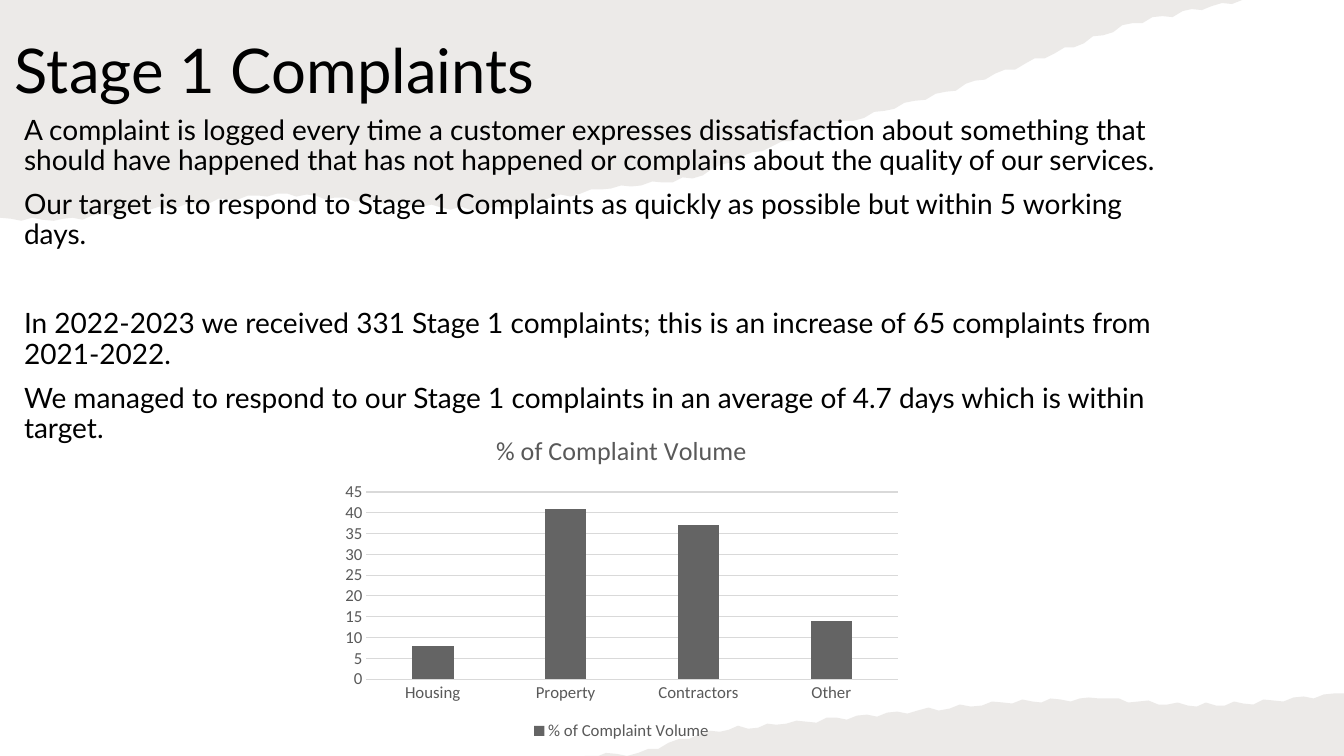
import math
from lxml import etree
from pptx import Presentation
from pptx import util as u
from pptx.chart.data import CategoryChartData
from pptx.dml.color import RGBColor
from pptx.enum import chart as charts, text
from pptx.oxml import ns

PX = 9144
SLIDE_WIDTH, SLIDE_HEIGHT = 1333, 750

BLACK = RGBColor(0x00, 0x00, 0x00)
WHITE = RGBColor(0xFF, 0xFF, 0xFF)
PAPER = RGBColor(0x82, 0x76, 0x6A)
BAR = RGBColor(0x64, 0x64, 0x64)
GRID = RGBColor(0xD9, 0xD9, 0xD9)
LABEL = RGBColor(0x59, 0x59, 0x59)

TEXT_FONT = "Lato"
CHART_FONT = "Calibri"
TITLE_SIZE, BODY_SIZE = 44, 20
CHART_TITLE_SIZE, CHART_LABEL_SIZE = 18.6, 12
PARAGRAPH_GAP = 10
SECTION_GAP = 42

TEAR_STEP = 10
TEAR_DEPTH = 2
PAPER_ALPHA = "15000"
TOP_TEAR = [(1232, 0), (1123, 23), (1046, 53), (938, 91), (826, 125), (736, 155), (687, 177),
            (596, 188), (476, 209), (390, 201), (275, 192), (139, 209), (53, 219), (0, 216)]
BOTTOM_TEAR = [(0, 63), (53, 60), (124, 38), (200, 31), (330, 18), (415, 10), (510, 6),
               (598, 13), (653, 11), (753, 1)]

HEADING = "Stage 1 Complaints"
FACTS = [
    ("A complaint is logged every time a customer expresses dissatisfaction about something "
     "that should have happened that has not happened or complains about the quality of our "
     "services.", PARAGRAPH_GAP),
    ("Our target is to respond to Stage 1 Complaints as quickly as possible but within "
     "5 working days.", PARAGRAPH_GAP),
    ("In 2022-2023 we received 331 Stage 1 complaints; this is an increase of 65 complaints "
     "from 2021-2022.", SECTION_GAP),
    ("We managed to respond to our Stage 1 complaints in an average of 4.7 days which is "
     "within target.", PARAGRAPH_GAP),
]
VOLUME_TITLE = "% of Complaint Volume"
VOLUME = {"Housing": 8, "Property": 41, "Contractors": 37, "Other": 14}


def roughen(bends):
    edge = []
    for (x1, y1), (x2, y2) in zip(bends, bends[1:]):
        steps = max(1, round(abs(x2 - x1) / TEAR_STEP))
        for step in range(steps):
            share = step / steps
            ripple = TEAR_DEPTH * math.sin(len(edge) * 2) if step else 0
            edge.append((round(x1 + (x2 - x1) * share), round(y1 + (y2 - y1) * share + ripple)))
    return edge + [bends[-1]]


def add_torn_paper(slide, left, top, corner, bends):
    builder = slide.shapes.build_freeform(*corner, scale=PX)
    builder.add_line_segments(roughen(bends), close=True)
    paper = builder.convert_to_shape(left * PX, top * PX)
    paper.shadow.inherit = False
    paper.line.fill.background()
    paper.fill.solid()
    paper.fill.fore_color.rgb = PAPER
    color = paper.fill._xPr.find(ns.qn("a:solidFill"))[0]
    etree.SubElement(color, ns.qn("a:alpha"), val=PAPER_ALPHA)


def style_font(font, size, color, name):
    font.size = u.Pt(size)
    font.bold = False
    font.name = name
    font.color.rgb = color


def add_text(slide, left, top, width, height, lines, size, anchor):
    box = slide.shapes.add_textbox(left * PX, top * PX, width * PX, height * PX)
    frame = box.text_frame
    frame.word_wrap = True
    frame.vertical_anchor = anchor
    for index, (line, gap) in enumerate(lines):
        paragraph = frame.add_paragraph() if index else frame.paragraphs[0]
        paragraph.line_spacing = 0.9
        paragraph.space_before = u.Pt(gap)
        run = paragraph.add_run()
        run.text = line
        style_font(run.font, size, BLACK, TEXT_FONT)


def style_line(line):
    line.color.rgb = GRID
    line.width = u.Pt(0.75)


def style_chart_title(chart):
    chart.has_title = True
    run = chart.chart_title.text_frame.paragraphs[0].add_run()
    run.text = VOLUME_TITLE
    style_font(run.font, CHART_TITLE_SIZE, LABEL, CHART_FONT)
    chart.chart_title.include_in_layout = False


def style_legend(chart):
    chart.has_legend = True
    chart.legend.position = charts.XL_LEGEND_POSITION.BOTTOM
    chart.legend.include_in_layout = False
    style_font(chart.legend.font, CHART_LABEL_SIZE, LABEL, CHART_FONT)


def style_axes(categories, values):
    for axis in (categories, values):
        axis.major_tick_mark = charts.XL_TICK_MARK.NONE
        axis.minor_tick_mark = charts.XL_TICK_MARK.NONE
        style_font(axis.tick_labels.font, CHART_LABEL_SIZE, LABEL, CHART_FONT)
    style_line(categories.format.line)
    values.format.line.fill.background()
    values.has_major_gridlines = True
    style_line(values.major_gridlines.format.line)
    values.minimum_scale = 0
    values.maximum_scale = 45
    values.major_unit = 5


def style_bars(plot):
    plot.vary_by_categories = False
    plot.gap_width = 219
    plot.overlap = -27
    fill = plot.series[0].format.fill
    fill.solid()
    fill.fore_color.rgb = BAR


def add_volume_chart(slide, left, top, width, height):
    data = CategoryChartData()
    data.categories = list(VOLUME)
    data.add_series(VOLUME_TITLE, list(VOLUME.values()))
    chart = slide.shapes.add_chart(
        charts.XL_CHART_TYPE.COLUMN_CLUSTERED,
        left * PX, top * PX, width * PX, height * PX, data).chart
    style_font(chart.font, 10, BLACK, CHART_FONT)
    style_chart_title(chart)
    style_legend(chart)
    style_axes(chart.category_axis, chart.value_axis)
    style_bars(chart.plots[0])


def add_complaints_slide(presentation):
    slide = presentation.slides.add_slide(presentation.slide_layouts[6])
    slide.background.fill.solid()
    slide.background.fill.fore_color.rgb = WHITE
    add_torn_paper(slide, 0, 0, (0, 0), TOP_TEAR)
    right, bottom = BOTTOM_TEAR[-1][0], BOTTOM_TEAR[0][1]
    add_torn_paper(slide, SLIDE_WIDTH - right, SLIDE_HEIGHT - bottom, (right, bottom), BOTTOM_TEAR)
    add_text(slide, 14, 110, 1150, 327, FACTS, BODY_SIZE, text.MSO_ANCHOR.TOP)
    add_text(slide, 5, 0, 1150, 145, [(HEADING, 0)], TITLE_SIZE, text.MSO_ANCHOR.MIDDLE)
    add_volume_chart(slide, 331, 412, 571, 327)


def main():
    presentation = Presentation()
    presentation.slide_width = SLIDE_WIDTH * PX
    presentation.slide_height = SLIDE_HEIGHT * PX
    add_complaints_slide(presentation)
    presentation.save("out.pptx")


if __name__ == "__main__":
    main()
